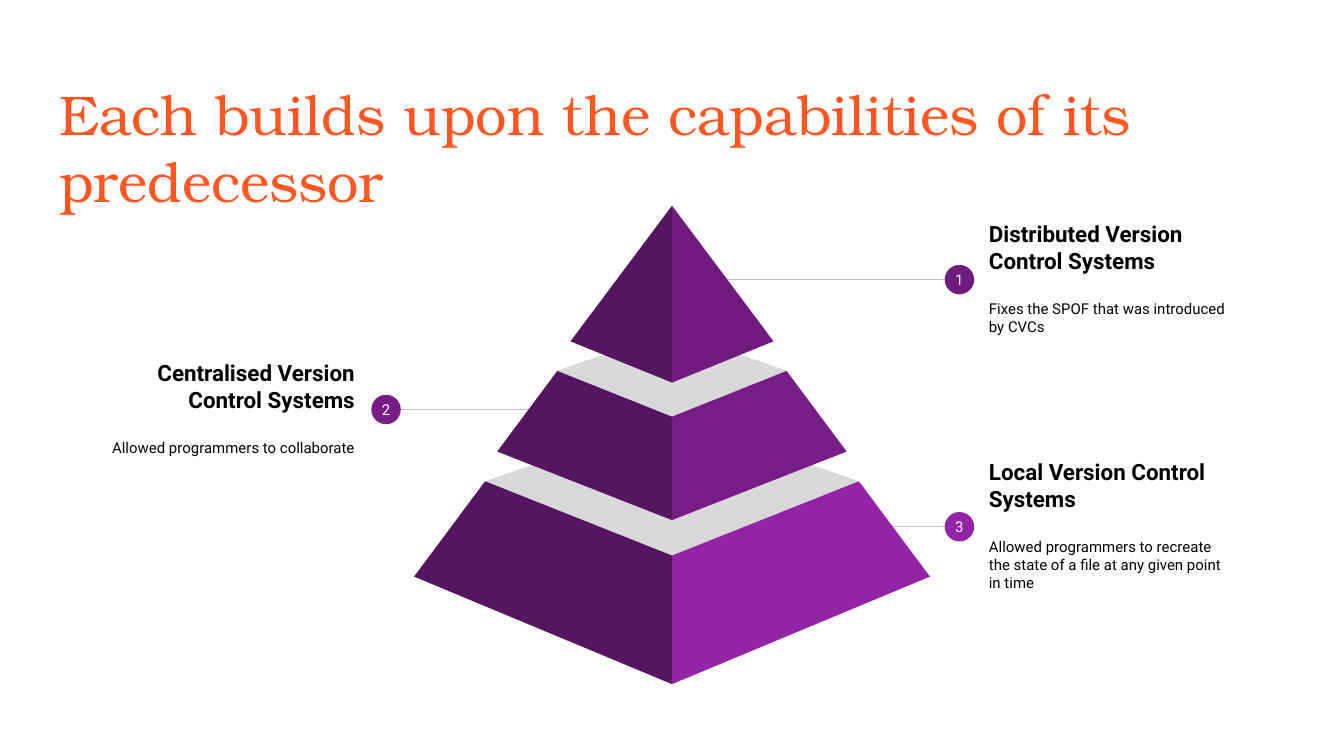
from lxml import etree
from pptx import Presentation
from pptx.dml.color import RGBColor
from pptx.enum.shapes import MSO_CONNECTOR, MSO_SHAPE
from pptx.enum.text import MSO_ANCHOR, MSO_AUTO_SIZE, PP_ALIGN
from pptx.oxml.ns import qn
from pptx.util import Pt

LINE, OVAL = MSO_CONNECTOR.STRAIGHT, MSO_SHAPE.OVAL
TOP, MIDDLE = MSO_ANCHOR.TOP, MSO_ANCHOR.MIDDLE
LEFT, RIGHT, CENTER = PP_ALIGN.LEFT, PP_ALIGN.RIGHT, PP_ALIGN.CENTER
FIXED = MSO_AUTO_SIZE.NONE

COLORS = {
    "title": "FF5722", "text": "000000", "white": "FFFFFF",
    "rule": "C2C2C2", "lid": "D9D9D9", "shade": "551561",
    "top": "701C7F", "mid": "761E86", "base": "9225A5",
}
AXIS = 360     # centre line of the pyramid
DOT = 15.8     # diameter of a number badge
BOX_W, BOX_H = 146.9, 108.7

# number, heading, body, badge centre, line start, box left, align, colour
NOTES = [
    (3, "Local Version Control Systems",
     "Allowed programmers to recreate the state of a file at any given point in time",
     (514, 282.2), 475.2, 522.7, LEFT, "base"),
    (2, "Centralised Version Control Systems",
     "Allowed programmers to collaborate",
     (206.8, 219.4), 285.8, 50.4, RIGHT, "mid"),
    (1, "Distributed Version Control Systems",
     "Fixes the SPOF that was introduced by CVCs",
     (514, 149.8), 386.6, 522.7, LEFT, "top"),
]

# colour, back y, upper (half width, y), upper front y,
# lower (half width, y), lower front y
TIERS = [
    ("base", 223.2, (100.1, 257.8), 297.6, (138.2, 308.9), 366.5),
    ("mid", 177.1, (61.4, 198.7), 223.2, (93.6, 241.9), 278.6),
    ("top", None, (0, 110.2), 110.2, (54.4, 182.9), 205.0),
]


def color(name):
    return RGBColor.from_string(COLORS[name])


def paint(shape, name):
    shape.shadow.inherit = False
    shape.fill.solid()
    shape.fill.fore_color.rgb = color(name)
    shape.line.fill.background()


def set_frame(frame, inset=7.2, anchor=TOP):
    frame.word_wrap = True
    frame.auto_size = FIXED
    frame.vertical_anchor = anchor
    frame.margin_left = frame.margin_right = Pt(inset)
    frame.margin_top = frame.margin_bottom = Pt(inset)


def write(para, text, size=8, font="Roboto", fill="text", bold=False,
          align=LEFT, before=0, after=0):
    para.alignment = align
    para.space_before, para.space_after = Pt(before), Pt(after)
    run = para.add_run()
    run.text = text
    run.font.size, run.font.name, run.font.bold = Pt(size), font, bold
    run.font.color.rgb = color(fill)


def add_title(slide, text):
    title = slide.shapes.title
    title.left, title.top = Pt(24.5), Pt(35.3)
    title.width, title.height = Pt(671), Pt(45.4)
    set_frame(title.text_frame)
    write(title.text_frame.paragraphs[0], text, size=30,
          font="TeX Gyre Bonum", fill="title")


def add_rule(shapes, start, end, y):
    rule = shapes.add_connector(LINE, Pt(start), Pt(y), Pt(end), Pt(y))
    rule.line.color.rgb = color("rule")
    rule.line.width = Pt(0.75)
    etree.SubElement(rule.element.spPr, qn("a:effectLst"))


def add_badge(shapes, num, x, y, fill):
    badge = shapes.add_shape(OVAL, Pt(x - DOT / 2), Pt(y - DOT / 2),
                             Pt(DOT), Pt(DOT))
    paint(badge, fill)
    set_frame(badge.text_frame, inset=0, anchor=MIDDLE)
    write(badge.text_frame.paragraphs[0], str(num), fill="white", align=CENTER)


def add_note(slide, num, head, body, spot, start, left, align, fill):
    shapes = slide.shapes.add_group_shape().shapes
    x, y = spot
    add_rule(shapes, start, x, y)
    box = shapes.add_textbox(Pt(left), Pt(y - 55.4), Pt(BOX_W), Pt(BOX_H))
    frame = box.text_frame
    set_frame(frame, anchor=MIDDLE)
    write(frame.paragraphs[0], head, size=12, bold=True, align=align)
    write(frame.add_paragraph(), body, align=align, before=14, after=16)
    add_badge(shapes, num, x, y, fill)


def add_face(shapes, points, fill):
    first, *rest = [(Pt(x), Pt(y)) for x, y in dict.fromkeys(points)]
    path = shapes.build_freeform(*first)
    path.add_line_segments(rest, close=True)
    paint(path.convert_to_shape(), fill)


def add_tier(shapes, fill, back, upper, front, lower, foot):
    (near, high), (far, low) = upper, lower
    # Lid of a tier that is cut off at the top
    if back is not None:
        add_face(shapes, [(AXIS - near, high), (AXIS, front),
                          (AXIS + near, high), (AXIS, back)], "lid")
    # Mirrored faces: shaded left, bright right
    for side, tone in ((-1, "shade"), (1, fill)):
        add_face(shapes, [(AXIS + side * near, high), (AXIS + side * far, low),
                          (AXIS, foot), (AXIS, front)], tone)


def main():
    deck = Presentation()
    deck.slide_width, deck.slide_height = Pt(720), Pt(405)
    slide = deck.slides.add_slide(deck.slide_layouts[5])

    add_title(slide, "Each builds upon the capabilities of its predecessor")

    # Callouts beside the pyramid
    for note in NOTES:
        add_note(slide, *note)

    # Pyramid, from the base up
    shapes = slide.shapes.add_group_shape().shapes
    for tier in TIERS:
        add_tier(shapes, *tier)

    deck.save("out.pptx")


if __name__ == "__main__":
    main()
